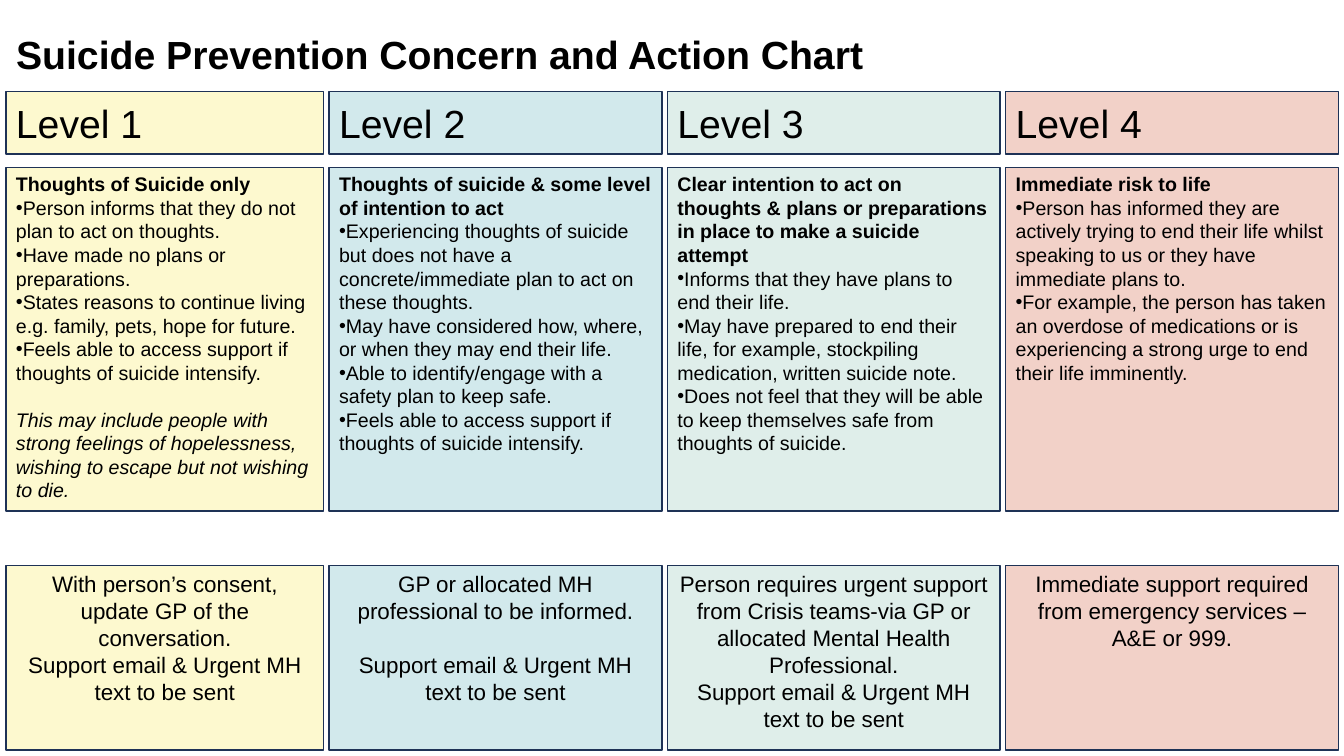
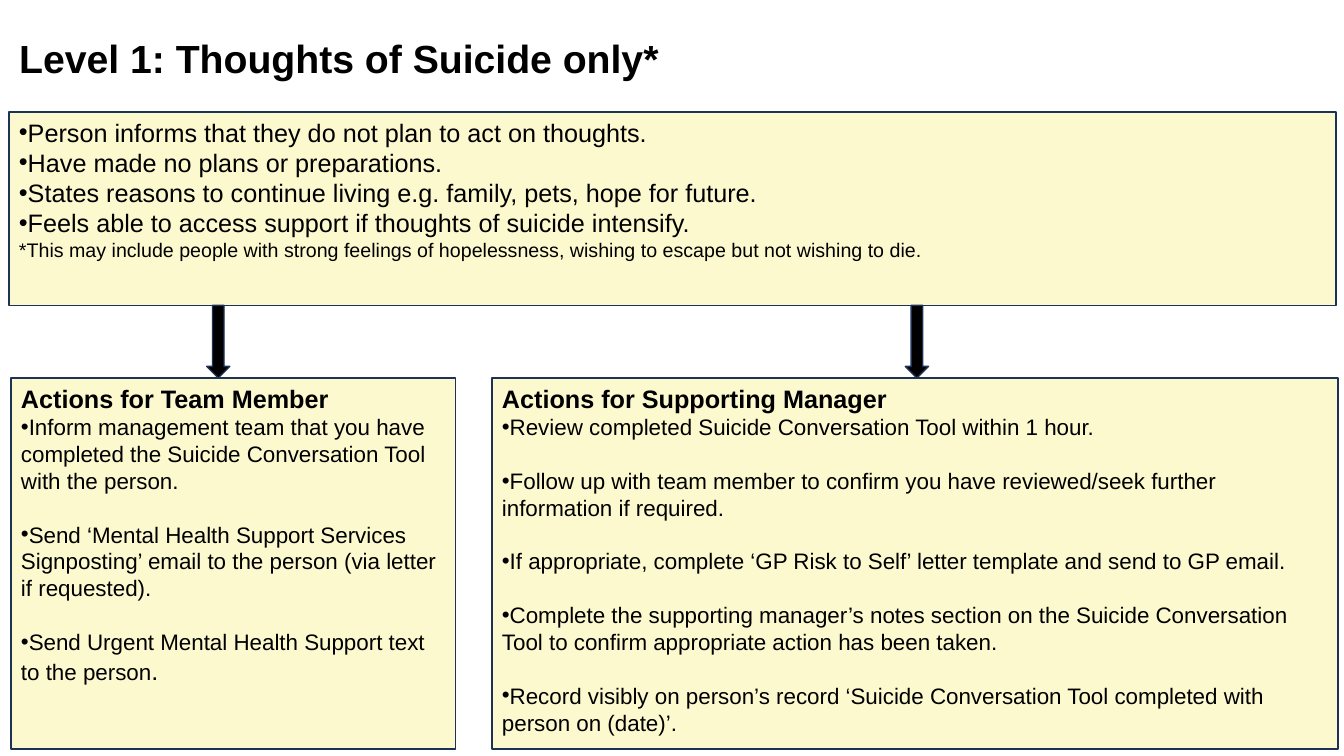
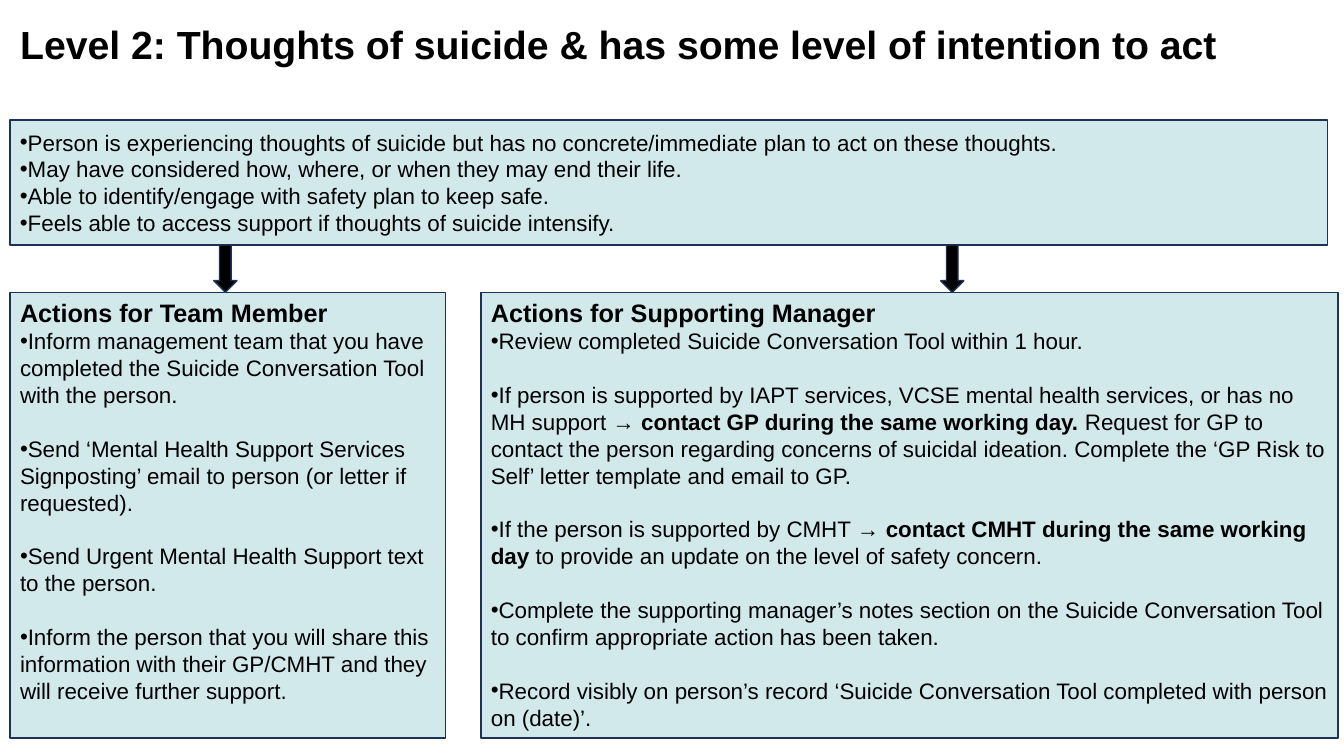
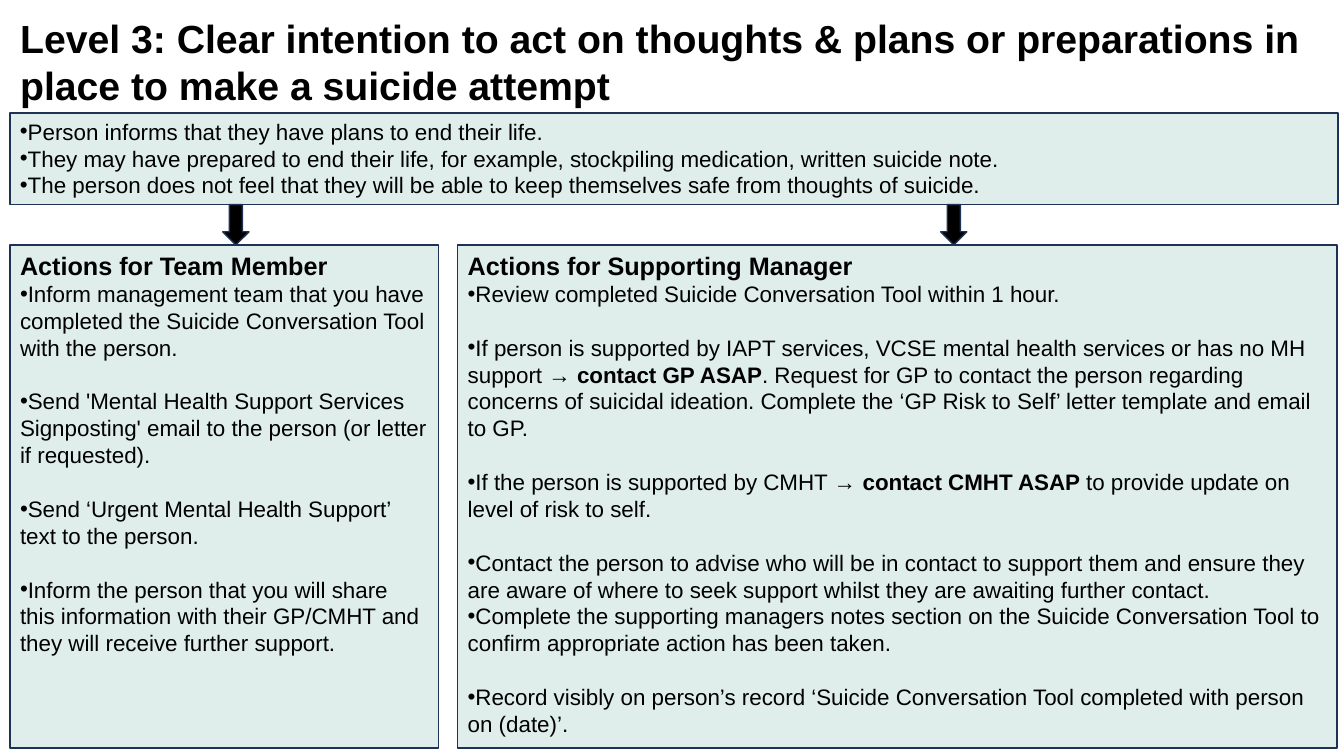
"""Build a four-slide concern and action chart for suicide prevention."""
from dataclasses import dataclass

from lxml import etree
from pptx import Presentation
from pptx.dml.color import RGBColor
from pptx.enum.shapes import MSO_SHAPE
from pptx.enum.text import MSO_ANCHOR, MSO_AUTO_SIZE, PP_ALIGN
from pptx.oxml.ns import qn
from pptx.util import Inches, Pt

RECT, DOWN = MSO_SHAPE.RECTANGLE, MSO_SHAPE.DOWN_ARROW
TOP, MID = MSO_ANCHOR.TOP, MSO_ANCHOR.MIDDLE
LEFT, CENTER = PP_ALIGN.LEFT, PP_ALIGN.CENTER
FIXED = MSO_AUTO_SIZE.NONE

CELL = Inches(0.1)
FONT = "Arial"
INK = "000000"
EDGE = "1E3256"
YELLOW, BLUE, GREEN, RED = "FDF9CF", "D2E9EC", "DFEEEA", "F2D1C8"
TITLE = {"size": 28, "bold": True}
LINE = 1.2
TITLE_ONLY = 5


@dataclass(frozen=True)
class Box:
    col: float
    row: float
    cols: float
    rows: float


@dataclass(frozen=True)
class Run:
    text: str
    bold: bool = False
    size: float = 0


@dataclass(frozen=True)
class Para:
    runs: tuple
    size: float = 16
    bold: bool = False
    italic: bool = False
    dot: bool = False
    gap: bool = False


@dataclass(frozen=True)
class Level:
    name: str
    fill: str
    cols: float
    signs: list
    steps: list


@dataclass(frozen=True)
class Plan:
    title: str
    place: Box
    fill: str
    signs: list
    top: Box
    team: Box
    lead: Box
    mids: tuple
    wide: float
    team_do: list
    lead_do: list
    anchor: MSO_ANCHOR = TOP


def line(text: str, size: float = 16, **style: bool) -> Para:
    return Para((Run(text),), size, **style)


def dots(*items: str | tuple, size: float = 16, gap: bool = False) -> list[Para]:
    rows = [(Run(i),) if isinstance(i, str) else i for i in items]
    return [Para(r, size, dot=True, gap=gap and n > 0) for n, r in enumerate(rows)]


def tasks(who: str, *items: str | tuple) -> list[Para]:
    return [line(f"Actions for {who}", 18, bold=True), *dots(*items, gap=True)]


def tint(code: str) -> RGBColor:
    return RGBColor.from_string(code)


def style(target: object, values: dict) -> None:
    for key, value in values.items():
        setattr(target, key, value)


def place(shape, box: Box) -> None:
    sides = {"left": box.col, "top": box.row, "width": box.cols, "height": box.rows}
    style(shape, {side: int(CELL * size) for side, size in sides.items()})


def bullet(para) -> None:
    props = para._p.get_or_add_pPr()
    style_keys = {"marL": "0", "indent": "0"}
    for key, value in style_keys.items():
        props.set(key, value)
    etree.SubElement(props, qn("a:buFont")).set("typeface", FONT)
    etree.SubElement(props, qn("a:buChar")).set("char", "•")


def write(shape, paras: list[Para], anchor: MSO_ANCHOR = TOP,
          align: PP_ALIGN = LEFT, lead: float = 1.0) -> None:
    frame = shape.text_frame
    style(frame, {"word_wrap": True, "auto_size": FIXED, "vertical_anchor": anchor,
                  "margin_left": CELL, "margin_right": CELL,
                  "margin_top": CELL // 2, "margin_bottom": CELL // 2})
    for n, item in enumerate(paras):
        para = frame.add_paragraph() if n else frame.paragraphs[0]
        before = Pt(item.size * LINE) if item.gap else Pt(0)
        style(para, {"alignment": align, "line_spacing": lead, "space_before": before})
        if item.dot:
            bullet(para)
        for part in item.runs:
            run = para.add_run()
            run.text = part.text
            style(run.font, {"name": FONT, "size": Pt(part.size or item.size),
                             "bold": item.bold or part.bold, "italic": item.italic})
            run.font.color.rgb = tint(INK)


def draw(slide, kind: MSO_SHAPE, box: Box, fill: str):
    shape = slide.shapes.add_shape(kind, 0, 0, CELL, CELL)
    place(shape, box)
    shape.shadow.inherit = False
    shape.fill.solid()
    shape.fill.fore_color.rgb = tint(fill)
    shape.line.color.rgb = tint(EDGE)
    shape.line.width = Pt(1)
    return shape


def start(deck, title: str, box: Box, lead: float = 1.0):
    slide = deck.slides.add_slide(deck.slide_layouts[TITLE_ONLY])
    place(slide.shapes.title, box)
    write(slide.shapes.title, [line(title, **TITLE)], lead=lead)
    return slide


def chart(deck, levels: list[Level]) -> None:
    slide = start(deck, "Suicide Prevention Concern and Action Chart",
                  Box(0.6, 2.2, 100.2, 5.8), 1.07)
    col, gap = 0.6, 0.55
    for item in levels:
        bands = (
            (9.1, 6.2, [line(item.name, 28)], MID, LEFT),
            (16.6, 34.1, item.signs, TOP, LEFT),
            (56.1, 18.3, item.steps, TOP, CENTER),
        )
        for row, rows, paras, anchor, align in bands:
            panel = draw(slide, RECT, Box(col, row, item.cols, rows), item.fill)
            write(panel, paras, anchor, align)
        col += item.cols + gap


def detail(deck, plan: Plan) -> None:
    slide = start(deck, plan.title, plan.place)
    panels = (
        (plan.team, plan.team_do, TOP),
        (plan.top, plan.signs, plan.anchor),
        (plan.lead, plan.lead_do, TOP),
    )
    for box, paras, anchor in panels:
        write(draw(slide, RECT, box, plan.fill), paras, anchor)
    foot = plan.top.row + plan.top.rows
    for mid in plan.mids:
        box = Box(mid - plan.wide / 2, foot, plan.wide, plan.team.row - foot)
        draw(slide, DOWN, box, INK)


SEND = "Support email & Urgent MH text to be sent"
ACCESS = "Feels able to access support if thoughts of suicide intensify."
SAFE = (
    "Person informs that they do not plan to act on thoughts.",
    "Have made no plans or preparations.",
    "States reasons to continue living e.g. family, pets, hope for future.",
    ACCESS,
)
MAYBE = ("This may include people with strong feelings of hopelessness, "
         "wishing to escape but not wishing to die.")
WHEN = "May have considered how, where, or when they may end their life."
INFORM = ("Inform management team that you have completed the Suicide "
          "Conversation Tool with the person.")
SHARE = ("Inform the person that you will share this information with their "
         "GP/CMHT and they will receive further support.")
TEXT = "Send Urgent Mental Health Support text to the person"
REVIEW = "Review completed Suicide Conversation Tool within 1 hour."
NOTES = ("Complete the supporting manager’s notes section on the Suicide "
         "Conversation Tool to confirm appropriate action has been taken.")
RECORD = ("Record visibly on person’s record ‘Suicide Conversation Tool "
          "completed with person on (date)’.")
LETTER = ("Request for GP to contact the person regarding concerns of suicidal "
          "ideation. Complete the ‘GP Risk to Self’ letter template and email to GP.")
CMHT = Run("If the person is supported by CMHT → ")
TEAM, LEAD = "Team Member", "Supporting Manager"

LEVELS = [
    Level("Level 1", YELLOW, 31.5,
          [line("Thoughts of Suicide only", 14, bold=True), *dots(*SAFE, size=14),
           line(MAYBE, 14, italic=True, gap=True)],
          [line("With person’s consent, update GP of the conversation."), line(SEND)]),
    Level("Level 2", BLUE, 33,
          [line("Thoughts of suicide & some level of intention to act", 14, bold=True),
           *dots("Experiencing thoughts of suicide but does not have a "
                 "concrete/immediate plan to act on these thoughts.",
                 WHEN, "Able to identify/engage with a safety plan to keep safe.",
                 ACCESS, size=14)],
          [line("GP or allocated MH professional to be informed."),
           line(SEND, gap=True)]),
    Level("Level 3", GREEN, 33,
          [line("Clear intention to act on thoughts & plans or preparations in place "
                "to make a suicide attempt", 14, bold=True),
           *dots("Informs that they have plans to end their life.",
                 "May have prepared to end their life, for example, stockpiling "
                 "medication, written suicide note.",
                 "Does not feel that they will be able to keep themselves safe from "
                 "thoughts of suicide.", size=14)],
          [line("Person requires urgent support from Crisis teams-via GP or allocated "
                "Mental Health Professional."), line(SEND)]),
    Level("Level 4", RED, 33,
          [line("Immediate risk to life", 14, bold=True),
           *dots("Person has informed they are actively trying to end their life "
                 "whilst speaking to us or they have immediate plans to.",
                 "For example, the person has taken an overdose of medications or is "
                 "experiencing a strong urge to end their life imminently.", size=14)],
          [line("Immediate support required from emergency services – A&E or 999.")]),
]

PLANS = [
    Plan("Level 1: Thoughts of Suicide only*", Box(0.9, 2.9, 107.9, 5.7), YELLOW,
         [*dots(*SAFE, size=18), line(f"*{MAYBE}", 14)],
         Box(0.9, 11.1, 131.6, 19.2), Box(1.1, 37.5, 44.1, 36.8),
         Box(48.8, 37.5, 83.9, 36.8), (21.65, 90.95), 2.3,
         tasks(TEAM, INFORM,
               "Send ‘Mental Health Support Services Signposting’ email to the person "
               "(via letter if requested).",
               (Run(TEXT), Run(".", size=18))),
         tasks(LEAD, REVIEW,
               "Follow up with team member to confirm you have reviewed/seek further "
               "information if required.",
               "If appropriate, complete ‘GP Risk to Self’ letter template and send "
               "to GP email.",
               NOTES, RECORD)),
    Plan("Level 2: Thoughts of suicide & has some level of intention to act",
         Box(1, 1.5, 124.9, 5.7), BLUE,
         dots("Person is experiencing thoughts of suicide but has no "
              "concrete/immediate plan to act on these thoughts.",
              WHEN, "Able to identify/engage with safety plan to keep safe.", ACCESS),
         Box(1, 11.9, 130.7, 12.4), Box(1, 29, 43.2, 44.2),
         Box(47.7, 29, 85, 44.2), (22.35, 94.45), 2.3,
         tasks(TEAM, INFORM,
               "Send ‘Mental Health Support Services Signposting’ email to person "
               "(or letter if requested).",
               f"{TEXT}.", SHARE),
         tasks(LEAD, REVIEW,
               (Run("If person is supported by IAPT services, VCSE mental health "
                    "services, or has no MH support → "),
                Run("contact GP during the same working day. ", True), Run(LETTER)),
               (CMHT, Run("contact CMHT during the same working day ", True),
                Run("to provide an update on the level of safety concern.")),
               NOTES, RECORD), MID),
    Plan("Level 3: Clear intention to act on thoughts & plans or preparations in place "
         "to make a suicide attempt", Box(1, 0.9, 129.8, 10.4), GREEN,
         dots("Person informs that they have plans to end their life.",
              "They may have prepared to end their life, for example, stockpiling "
              "medication, written suicide note.",
              "The person does not feel that they will be able to keep themselves safe "
              "from thoughts of suicide."),
         Box(1, 11.2, 131.7, 9.1), Box(1, 24.3, 42.5, 49.9),
         Box(45.4, 24.3, 87.2, 49.9), (23.4, 94.6), 2.6,
         tasks(TEAM, INFORM,
               "Send 'Mental Health Support Services Signposting' email to the person "
               "(or letter if requested).",
               "Send ‘Urgent Mental Health Support’ text to the person.", SHARE),
         [*tasks(LEAD, REVIEW,
                 (Run("If person is supported by IAPT services, VCSE mental health "
                      "services or has no MH support → "),
                  Run("contact GP ASAP", True), Run(f". {LETTER}")),
                 (CMHT, Run("contact CMHT ASAP ", True),
                  Run("to provide update on level of risk to self.")),
                 "Contact the person to advise who will be in contact to support them "
                 "and ensure they are aware of where to seek support whilst they are "
                 "awaiting further contact."),
          *dots(NOTES.replace("manager’s", "managers"), RECORD, gap=True)]),
]


def main() -> None:
    deck = Presentation()
    style(deck, {"slide_width": Inches(13.33), "slide_height": Inches(7.5)})
    chart(deck, LEVELS)
    for plan in PLANS:
        detail(deck, plan)
    deck.save("out.pptx")


if __name__ == "__main__":
    main()
